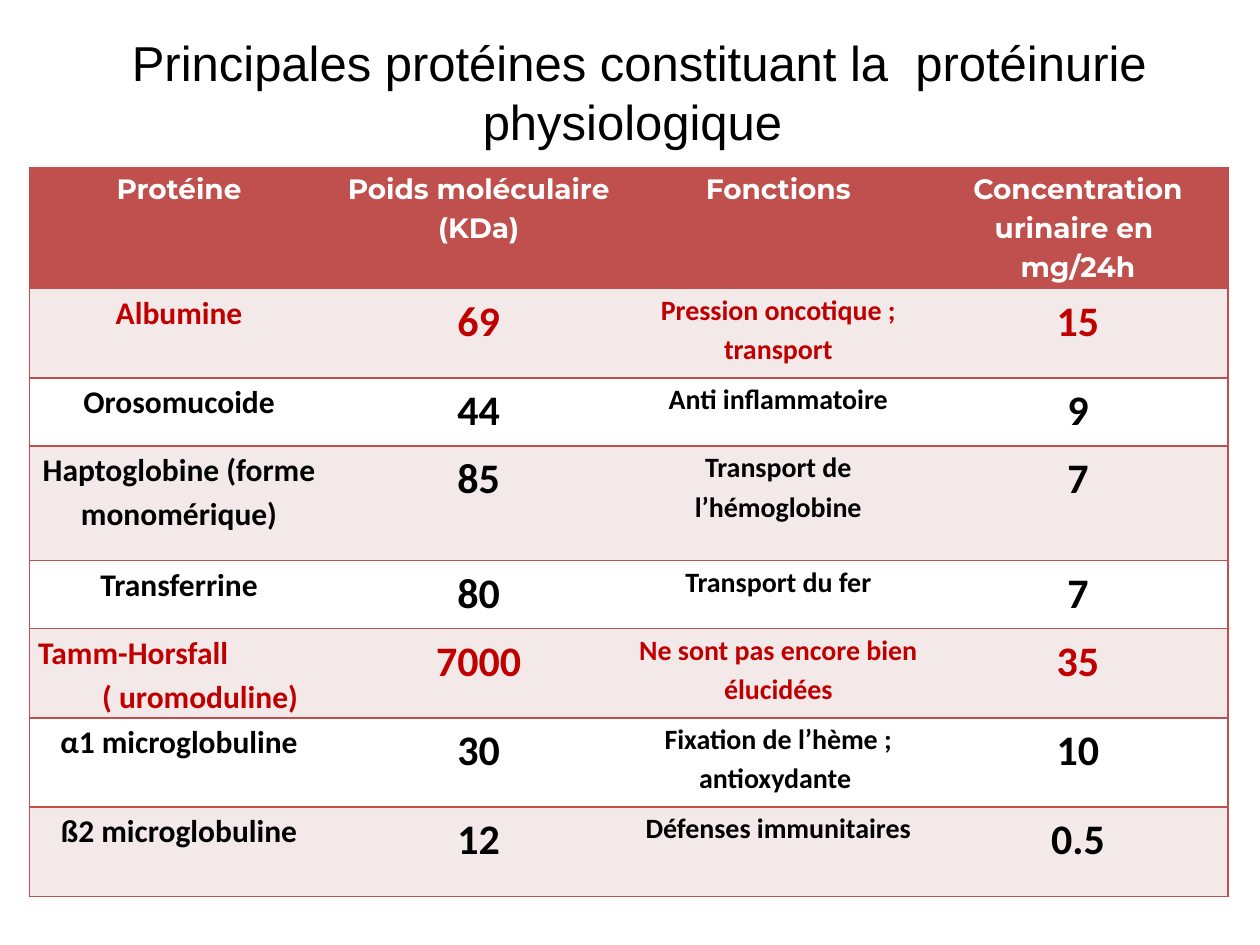
from lxml.etree import SubElement
from pptx import Presentation
from pptx.dml.color import RGBColor
from pptx.enum.text import MSO_ANCHOR, MSO_AUTO_SIZE, PP_ALIGN
from pptx.oxml.ns import qn
from pptx.util import Cm, Pt

BLACK = RGBColor(0x00, 0x00, 0x00)
WHITE = RGBColor(0xFF, 0xFF, 0xFF)
CRIMSON = RGBColor(0xC0, 0x00, 0x00)
BRICK = RGBColor(0xC0, 0x50, 0x4D)
BLUSH = RGBColor(0xF4, 0xE9, 0xE9)

TITLE = "Principales protéines constituant la  protéinurie physiologique "
HEADERS = ["Protéine", "Poids moléculaire\n(KDa)", "Fonctions",
           "Concentration urinaire en  mg/24h"]
PROTEINS = [
    ("Albumine", "69", "Pression oncotique\u00a0; transport", "15"),
    ("Orosomucoide", "44", "Anti inflammatoire", "9"),
    ("Haptoglobine (forme monomérique)", "85", "Transport de l’hémoglobine", "7"),
    ("Transferrine", "80", "Transport du fer", "7"),
    ("Tamm-Horsfall\n( uromoduline)", "7000", "Ne sont pas encore bien élucidées", "35"),
    ("α1 microglobuline", "30", "Fixation de l’hème\u00a0; antioxydante ", "10"),
    ("ß2 microglobuline", "12", "Défenses immunitaires", "0.5"),
]
HIGHLIGHTED = {"Albumine", "Tamm-Horsfall\n( uromoduline)"}
ROW_HEIGHTS = [2.44, 1.8, 1.37, 2.31, 1.37, 1.8, 1.8, 1.8]
COLUMN_WIDTH = 6.04
BODY_SIZES = [18, 24, 16, 24]


def write(tf, text, size, font="Calibri", color=BLACK, bold=True,
          align=PP_ALIGN.CENTER, spacing=1.15):
    for i, line in enumerate(text.split("\n")):
        p = tf.paragraphs[0] if i == 0 else tf.add_paragraph()
        p.alignment = align
        p.line_spacing = spacing
        r = p.add_run()
        r.text = line
        r.font.size = Pt(size)
        r.font.name = font
        r.font.bold = bold
        r.font.color.rgb = color


def add_border(cell, side, color=None):
    ln = SubElement(cell._tc.get_or_add_tcPr(), qn(f"a:ln{side}"), w=str(Pt(1)))
    if color is None:
        SubElement(ln, qn("a:noFill"))
    else:
        fill = SubElement(ln, qn("a:solidFill"))
        SubElement(fill, qn("a:srgbClr"), val=str(color))


def format_cell(cell, fill, first, last):
    cell.margin_left = cell.margin_right = Cm(0.18)
    cell.margin_top = cell.margin_bottom = 0
    add_border(cell, "L", BRICK if first else None)
    add_border(cell, "R", BRICK if last else None)
    add_border(cell, "T", BRICK)
    add_border(cell, "B", BRICK)
    cell.fill.solid()
    cell.fill.fore_color.rgb = fill


def add_title(s):
    sp = s.shapes.title
    sp.left, sp.top, sp.width, sp.height = Cm(1.57), Cm(0.53), Cm(22.63), Cm(2.64)
    tf = sp.text_frame
    tf.word_wrap = True
    tf.auto_size = MSO_AUTO_SIZE.NONE
    tf.vertical_anchor = MSO_ANCHOR.TOP
    write(tf, TITLE, 28, font="Arial", bold=False, spacing=1.0)


def add_protein_table(s):
    rows = [HEADERS, *PROTEINS]
    columns = len(HEADERS)
    table = s.shapes.add_table(len(rows), columns, Cm(0.59), Cm(3.38),
                               Cm(COLUMN_WIDTH * columns), Cm(sum(ROW_HEIGHTS))).table
    for column in table.columns:
        column.width = Cm(COLUMN_WIDTH)
    for i, (values, height) in enumerate(zip(rows, ROW_HEIGHTS)):
        table.rows[i].height = Cm(height)
        fill = BRICK if i == 0 else BLUSH if i % 2 else WHITE
        color = CRIMSON if values[0] in HIGHLIGHTED else BLACK
        for j, text in enumerate(values):
            cell = table.cell(i, j)
            format_cell(cell, fill, j == 0, j == columns - 1)
            if i == 0:
                write(cell.text_frame, text, 16, font="Montserrat", color=WHITE)
            else:
                write(cell.text_frame, text, BODY_SIZES[j], color=color)
            if j == 0 and "\n" in text:
                name, synonym = cell.text_frame.paragraphs
                name.alignment = PP_ALIGN.LEFT
                synonym._p.get_or_add_pPr().set("marL", str(Cm(0.85)))


def main():
    prs = Presentation()
    prs.slide_width, prs.slide_height = Cm(25.4), Cm(19.05)
    s = prs.slides.add_slide(prs.slide_layouts[5])
    add_title(s)
    add_protein_table(s)
    prs.save("out.pptx")


if __name__ == "__main__":
    main()
